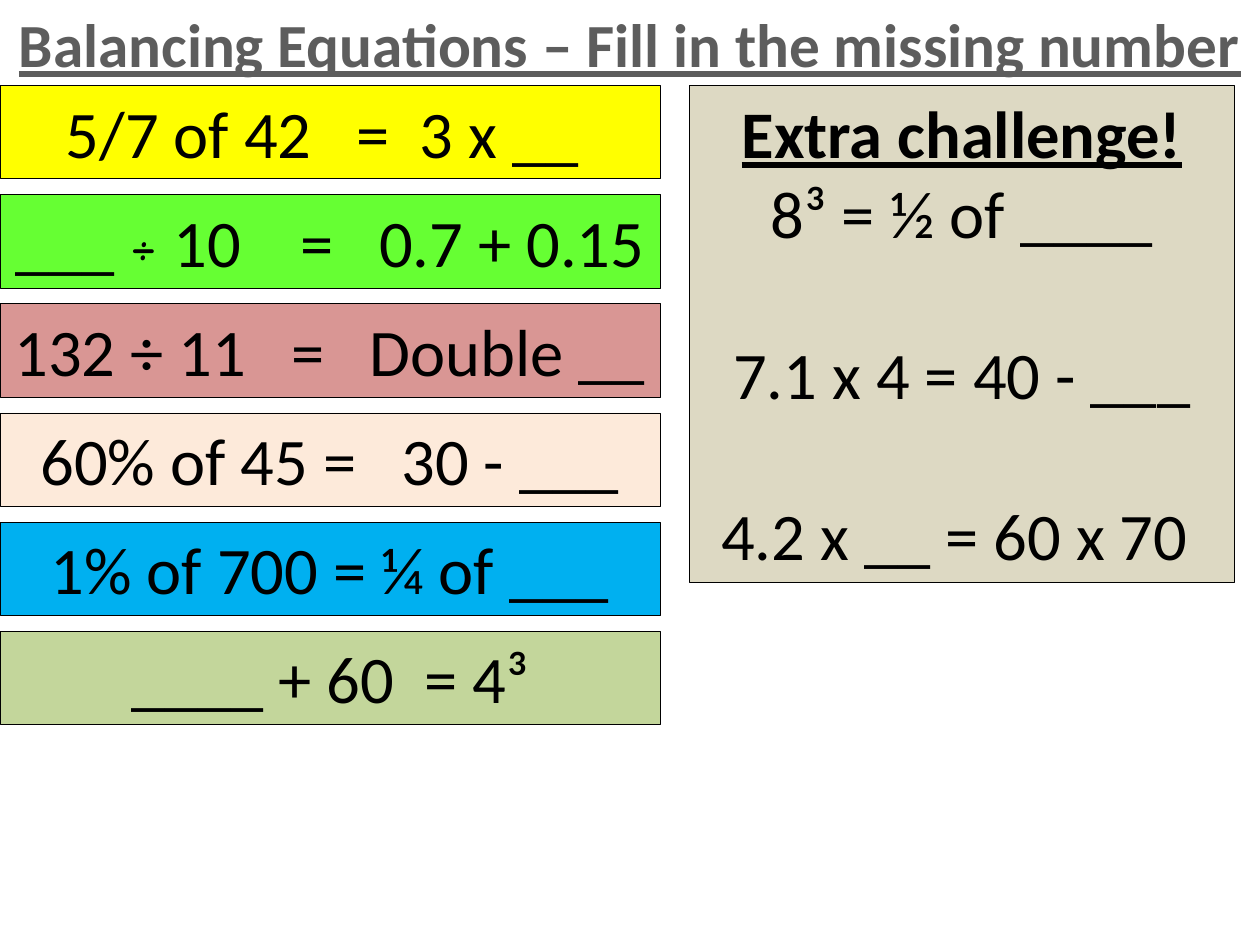
from dataclasses import dataclass, field

from pptx import Presentation
from pptx.dml.color import RGBColor
from pptx.enum.shapes import MSO_SHAPE
from pptx.enum.text import MSO_ANCHOR, PP_ALIGN
from pptx.util import Inches, Pt

COLORS = {
    "title": "5D5D5D",
    "ink": "000000",
    "yellow": "FFFF00",
    "green": "66FF33",
    "rose": "D99694",
    "peach": "FDEADA",
    "blue": "00B0F0",
    "olive": "C3D69B",
    "sand": "DDD9C3",
}
BODY = {"name": "Calibri", "size": Pt(38)}
HEADING = BODY | {"bold": True, "underline": True}
TITLE = HEADING | {"size": Pt(35)}
SYMBOL = BODY | {"name": "Comic Neue"}
FRAME = {"word_wrap": True, "vertical_anchor": MSO_ANCHOR.TOP}

CARD_TOP = 0.68
CARD_PITCH = 0.866
QUESTION_GAP = 46.4


@dataclass
class Span:
    text: str
    style: dict = field(default_factory=lambda: BODY)


@dataclass
class Line:
    spans: list[Span]
    space_before: float = 0


@dataclass
class Card:
    left: float
    top: float
    width: float
    height: float
    fill: str
    lines: list[Line]


EQUATIONS = [
    ("yellow", [Span("5/7 of 42   =  3 x __ ")]),
    ("green", [Span("___ "), Span("÷", SYMBOL), Span(" 10    =   0.7 + 0.15")]),
    ("rose", [Span("132 ÷ 11   =   Double __")]),
    ("peach", [Span("60% of 45 =   30 - ___")]),
    ("blue", [Span("1% of 700 = ¼ of ___")]),
    ("olive", [Span("____ + 60  = 4³")]),
]
CHALLENGE = [
    Line([Span("Extra challenge!", HEADING)]),
    Line([Span("8³ = ½ of ____")]),
    Line([Span("7.1 x 4 = 40 - ___")], QUESTION_GAP),
    Line([Span("4.2 x __ = 60 x 70 ")], QUESTION_GAP),
]


def color(name: str) -> RGBColor:
    return RGBColor.from_string(COLORS[name])


def apply(target, values: dict) -> None:
    for name, value in values.items():
        setattr(target, name, value)


def write_lines(box, lines: list[Line], ink: str) -> None:
    frame = box.text_frame
    apply(frame, FRAME)
    for index, line in enumerate(lines):
        para = frame.add_paragraph() if index else frame.paragraphs[0]
        apply(para, {"alignment": PP_ALIGN.CENTER, "space_before": Pt(line.space_before)})
        for span in line.spans:
            run = para.add_run()
            run.text = span.text
            apply(run.font, span.style)
            run.font.color.rgb = color(ink)


def draw_card(slide, card: Card) -> None:
    area = map(Inches, (card.left, card.top, card.width, card.height))
    box = slide.shapes.add_shape(MSO_SHAPE.RECTANGLE, *area)
    box.shadow.inherit = False
    box.fill.solid()
    box.fill.fore_color.rgb = color(card.fill)
    box.line.color.rgb = color("ink")
    box.line.width = Pt(0.5)
    write_lines(box, card.lines, "ink")


def main() -> None:
    deck = Presentation()
    apply(deck, {"slide_width": Inches(10), "slide_height": Inches(7.5)})
    slide = deck.slides.add_slide(deck.slide_layouts[6])

    title = slide.shapes.add_textbox(Inches(0), Inches(0), Inches(10), Inches(0.69))
    heading = Span("Balancing Equations – Fill in the missing number", TITLE)
    write_lines(title, [Line([heading])], "title")

    for row, (fill, spans) in enumerate(EQUATIONS):
        top = CARD_TOP + row * CARD_PITCH
        draw_card(slide, Card(0, top, 5.24, 0.74, fill, [Line(spans)]))
    draw_card(slide, Card(5.47, CARD_TOP, 4.33, 3.94, "sand", CHALLENGE))

    deck.save("out.pptx")


if __name__ == "__main__":
    main()
